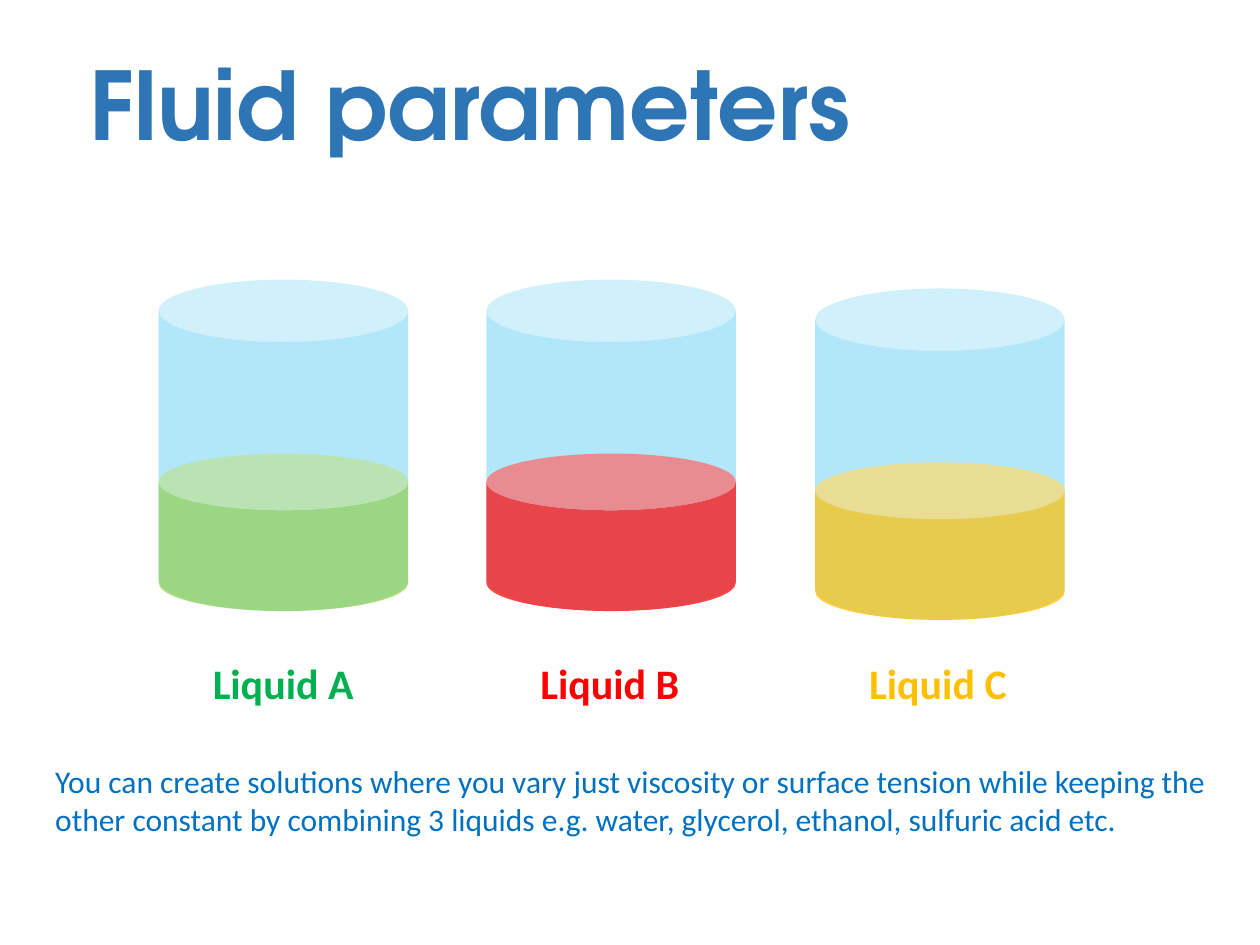
"""Build the fluid parameters slide with three partly filled beakers."""
from lxml.etree import SubElement
from pptx import Presentation
from pptx.dml.color import RGBColor
from pptx.enum.shapes import MSO_SHAPE
from pptx.enum.text import MSO_ANCHOR
from pptx.oxml.ns import qn
from pptx.util import Inches, Pt

COLORS = {
    "title": "2E75B6", "body": "0070C0", "glass": "00B0F0",
    "green": "92D050", "dark green": "00B050", "red": "FF0000", "amber": "FFC000",
}


def add_text(slide, text, left, top, width, height, size, color,
             font="Calibri", bold=False, wrap=True):
    box = slide.shapes.add_textbox(Inches(left), Inches(top), Inches(width), Inches(height))
    frame = box.text_frame
    frame.text = text
    frame.word_wrap = wrap
    run_font = frame.paragraphs[0].runs[0].font
    run_font.name = font
    run_font.size = Pt(size)
    run_font.bold = bold
    run_font.color.rgb = RGBColor.from_string(COLORS[color])
    return frame


def add_can(slide, left, top, height, color, opacity, rim):
    can = slide.shapes.add_shape(
        MSO_SHAPE.CAN, Inches(left), Inches(top), Inches(1.98), Inches(height))
    can.adjustments[0] = rim
    can.shadow.inherit = False
    can.line.fill.background()
    can.fill.solid()
    can.fill.fore_color.rgb = RGBColor.from_string(COLORS[color])
    srgb = can.fill._xPr.find(qn("a:solidFill")).find(qn("a:srgbClr"))
    SubElement(srgb, qn("a:alpha")).set("val", str(opacity * 1000))


presentation = Presentation()
presentation.slide_width = Inches(10)
presentation.slide_height = Inches(7.5)
slide = presentation.slides.add_slide(presentation.slide_layouts[6])

title = add_text(slide, "Fluid parameters", 0.61, 0.37, 8.62, 1.01, 54, "title",
                 font="TeX Gyre Adventor", bold=True)
title.vertical_anchor = MSO_ANCHOR.MIDDLE
title.paragraphs[0].line_spacing = 0.9

liquids = [
    ("Liquid A", 1.26, 2.22, "green", "dark green"),
    ("Liquid B", 3.86, 2.22, "red", "red"),
    ("Liquid C", 6.47, 2.29, "amber", "amber"),
]
for name, left, top, liquid_color, label_color in liquids:
    add_can(slide, left, top, 2.63, "glass", 30, 0.25)
    add_can(slide, left, top + 1.38, 1.25, liquid_color, 70, 0.36)
    add_text(slide, name, left + 0.33, 5.17, 1.32, 0.5, 24, label_color,
             bold=True, wrap=False)

add_text(slide,
         "You can create solutions where you vary just viscosity or surface tension "
         "while keeping the other constant by combining 3 liquids e.g. water, glycerol, "
         "ethanol, sulfuric acid etc.",
         0.34, 6, 9.53, 0.71, 18, "body")

presentation.save("out.pptx")
